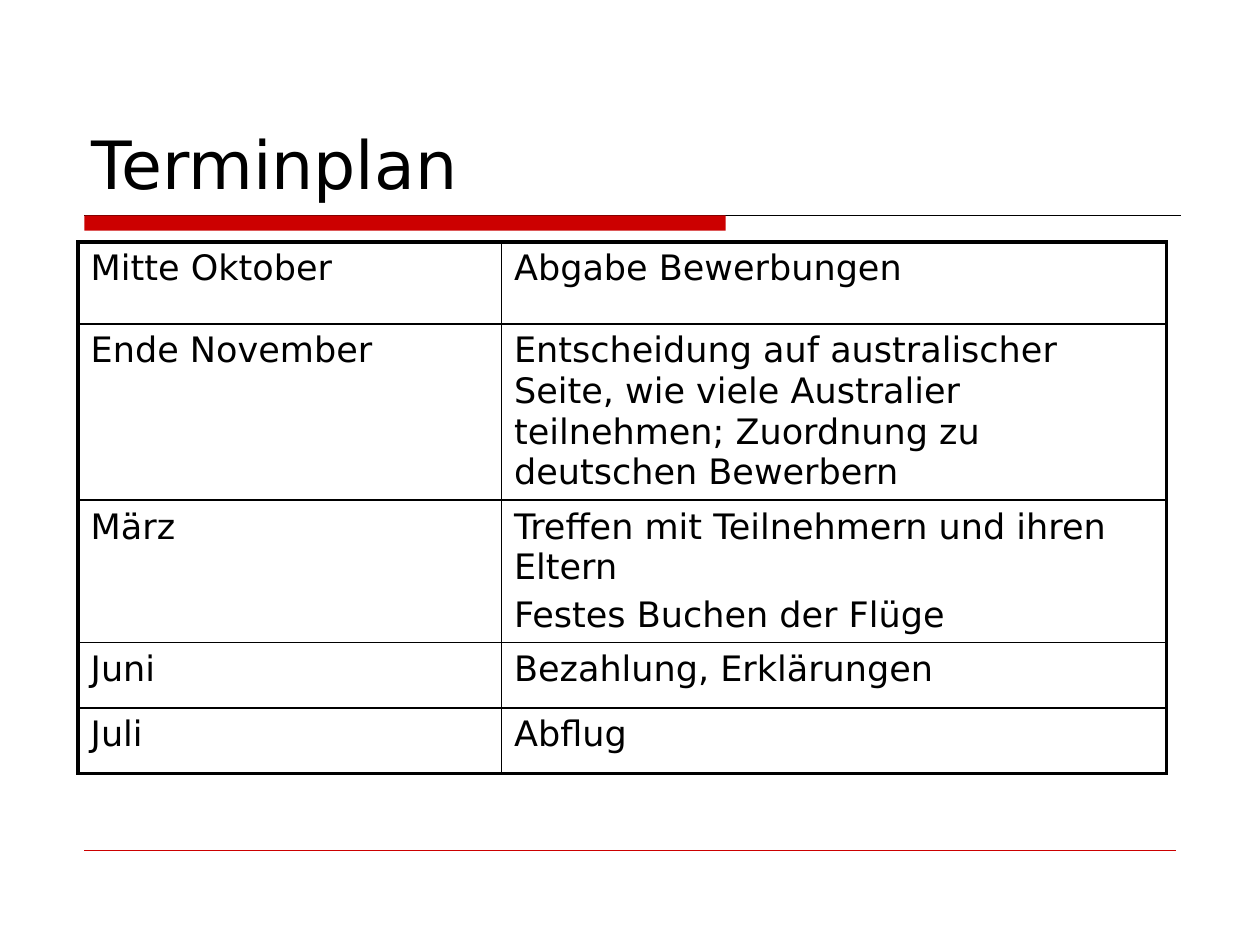
"""Build the Terminplan slide with its schedule table."""
from lxml import etree
from pptx import Presentation, util as u
from pptx.dml.color import RGBColor
from pptx.enum import shapes, text
from pptx.oxml.ns import qn

TITLE = "Terminplan"
SCHEDULE = [
    ("Mitte Oktober", ["Abgabe Bewerbungen"], 0.65),
    ("Ende November", ["Entscheidung auf australischer Seite, wie viele Australier "
                       "teilnehmen; Zuordnung zu deutschen Bewerbern"], 1.4),
    ("März", ["Treffen mit Teilnehmern und ihren Eltern",
              "Festes Buchen der Flüge"], 1.13),
    ("Juni", ["Bezahlung, Erklärungen"], 0.52),
    ("Juli", ["Abflug"], 0.52),
]
COLUMN_WIDTHS = [3.36, 5.28]
COLORS = {"ink": "000000", "accent": "CC0000"}
FONT = "DejaVu Sans"
OUTER, INNER = 2.25, 1


def color(name):
    return RGBColor.from_string(COLORS[name])


def add_text(paragraph, words, size):
    run = paragraph.add_run()
    run.text = words
    run.font.name, run.font.size = FONT, u.Pt(size)
    run.font.color.rgb = color("ink")


def add_rule(slide, left, right, y, ink, width):
    rule = slide.shapes.add_connector(
        shapes.MSO_CONNECTOR.STRAIGHT, *map(u.Inches, (left, y, right, y)))
    rule.line.color.rgb, rule.line.width = color(ink), u.Pt(width)
    etree.SubElement(rule._element.spPr, qn("a:effectLst"))


def set_border(cell, side, width):
    line = etree.SubElement(cell._tc.get_or_add_tcPr(), qn(f"a:ln{side}"),
                            w=str(u.Pt(width)))
    fill = etree.SubElement(line, qn("a:solidFill"))
    etree.SubElement(fill, qn("a:srgbClr"), val=COLORS["ink"])


def add_title(slide):
    title = slide.shapes.title
    title.left, title.top, title.width, title.height = map(
        u.Inches, (0.63, 0.33, 8.75, 1.33))
    frame = title.text_frame
    frame.auto_size = text.MSO_AUTO_SIZE.NONE
    frame.vertical_anchor = text.MSO_ANCHOR.BOTTOM
    frame.paragraphs[0].alignment = text.PP_ALIGN.LEFT
    add_text(frame.paragraphs[0], TITLE, 38)


def add_schedule(slide):
    heights = [height for *_, height in SCHEDULE]
    table = slide.shapes.add_table(
        len(SCHEDULE), len(COLUMN_WIDTHS),
        *map(u.Inches, (0.62, 1.92, sum(COLUMN_WIDTHS), sum(heights)))).table
    table.first_row = table.horz_banding = False
    for column, width in zip(table.columns, COLUMN_WIDTHS):
        column.width = u.Inches(width)
    last_row, last_column = len(SCHEDULE) - 1, len(COLUMN_WIDTHS) - 1
    for r, (date, events, height) in enumerate(SCHEDULE):
        table.rows[r].height = u.Inches(height)
        for c, entries in enumerate(([date], events)):
            cell = table.cell(r, c)
            edges = {"L": c == 0, "R": c == last_column,
                     "T": r == 0, "B": r == last_row}
            for side, outside in edges.items():
                set_border(cell, side, OUTER if outside else INNER)
            cell.fill.background()
            frame = cell.text_frame
            for i, entry in enumerate(entries):
                paragraph = frame.add_paragraph() if i else frame.paragraphs[0]
                if i:
                    paragraph.space_before = u.Pt(4)
                add_text(paragraph, entry, 20)


def main():
    deck = Presentation()
    deck.slide_width, deck.slide_height = u.Inches(10), u.Inches(7.5)
    slide = deck.slides.add_slide(deck.slide_layouts[5])
    add_rule(slide, 0.67, 9.37, 1.71, "ink", 0.75)
    bar = slide.shapes.add_shape(shapes.MSO_SHAPE.RECTANGLE,
                                 *map(u.Inches, (0.67, 1.71, 5.09, 0.12)))
    bar.shadow.inherit = False
    bar.fill.solid()
    bar.fill.fore_color.rgb = color("accent")
    bar.line.fill.background()
    add_rule(slide, 0.67, 9.33, 6.75, "accent", 0.25)
    add_title(slide)
    add_schedule(slide)
    deck.save("out.pptx")


if __name__ == "__main__":
    main()
